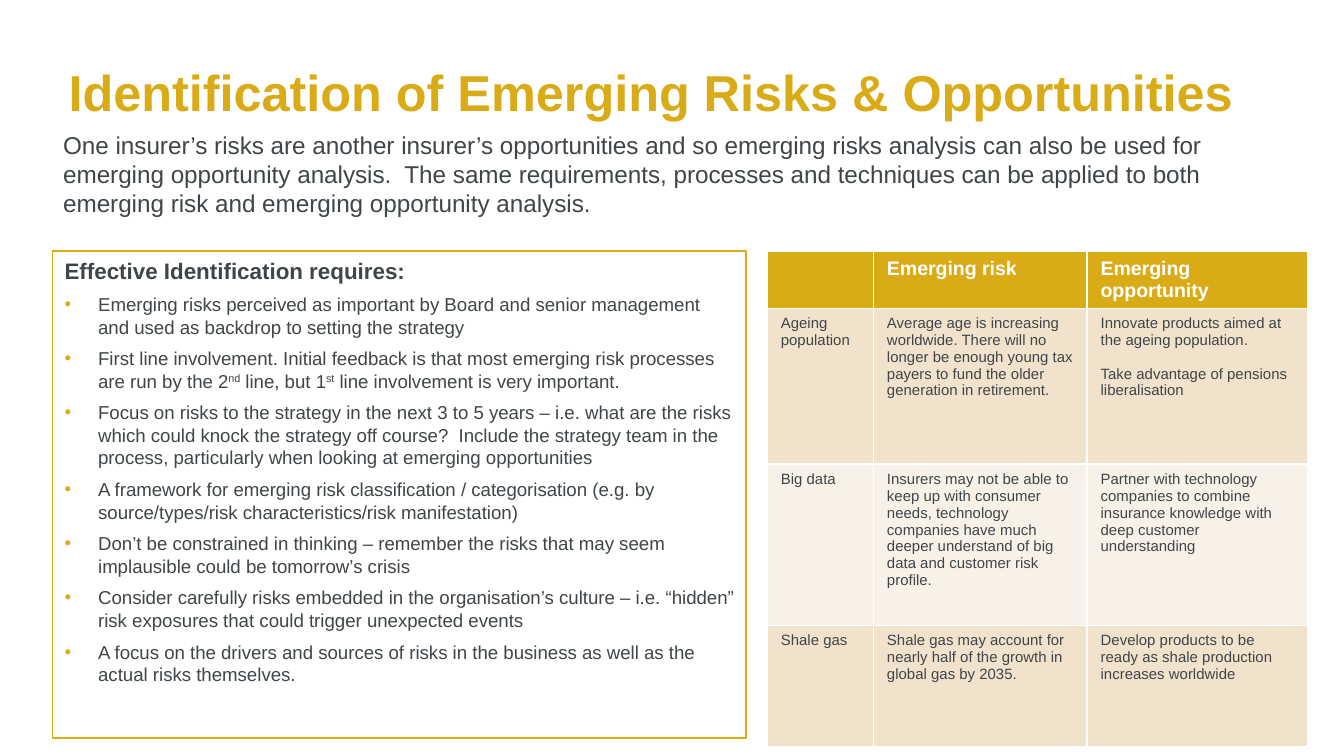
"""Build the slide on identifying emerging risks and opportunities."""
import pptx
import pptx.dml.color
import pptx.enum.text
import pptx.oxml.ns
import pptx.util
from lxml import etree

Inches = pptx.util.Inches
Pt = pptx.util.Pt
RGBColor = pptx.dml.color.RGBColor

GOLD = RGBColor(0xD9, 0xAB, 0x16)
SLATE = RGBColor(0x3F, 0x45, 0x48)
WHITE = RGBColor(0xFF, 0xFF, 0xFF)
SAND = RGBColor(0xF1, 0xE2, 0xCC)
CREAM = RGBColor(0xF8, 0xF1, 0xE8)

TITLE = "Identification of Emerging Risks & Opportunities"
INTRO = (
    "One insurer’s risks are another insurer’s opportunities and so emerging risks analysis "
    "can also be used for emerging opportunity analysis.  The same requirements, processes and "
    "techniques can be applied to both emerging risk and emerging opportunity analysis."
)
HEADING = "Effective Identification requires:"
SUPERSCRIPTS = ("nd", "st")
REQUIREMENTS = [
    ["Emerging risks perceived as important by Board and senior management and used as "
     "backdrop to setting the strategy"],
    ["First line involvement. Initial feedback is that most emerging risk processes are run "
     "by the 2", "nd", " line, but 1", "st", " line involvement is very important."],
    ["Focus on risks to the strategy in the next 3 to 5 years – i.e. what are the risks which "
     "could knock the strategy off course?  Include the strategy team in the process, "
     "particularly when looking at emerging opportunities"],
    ["A framework for emerging risk classification / categorisation (e.g. by "
     "source/types/risk characteristics/risk manifestation)"],
    ["Don’t be constrained in thinking – remember the risks that may seem implausible could "
     "be tomorrow’s crisis"],
    ["Consider carefully risks embedded in the organisation’s culture – i.e. “hidden” risk "
     "exposures that could trigger unexpected events"],
    ["A focus on the drivers and sources of risks in the business as well as the actual risks "
     "themselves."],
]
TABLE_ROWS = [
    ("", "Emerging risk", "Emerging opportunity"),
    ("Ageing population",
     "Average age is increasing worldwide. There will no longer be enough young tax payers to "
     "fund the older generation in retirement.",
     "Innovate products aimed at the ageing population.\n"
     "Take advantage of pensions liberalisation"),
    ("Big data",
     "Insurers may not be able to keep up with consumer needs, technology companies have much "
     "deeper understand of big data and customer risk profile.",
     "Partner with technology companies to combine insurance knowledge with deep customer "
     "understanding"),
    ("Shale gas",
     "Shale gas may account for nearly half of the growth in global gas by 2035.",
     "Develop products to be ready as shale production increases worldwide"),
]
COLUMN_WIDTHS = (0.79, 1.59, 1.64)
ROW_HEIGHTS = (0.35, 1.16, 1.2, 0.9)
ROW_FILLS = (GOLD, SAND, CREAM, SAND)


def place(box, left, top, width, height):
    box.left, box.top = Inches(left), Inches(top)
    box.width, box.height = Inches(width), Inches(height)
    frame = box.text_frame
    frame.word_wrap = True
    frame.auto_size = pptx.enum.text.MSO_AUTO_SIZE.NONE
    frame.margin_left = frame.margin_right = Inches(0.09)
    frame.margin_top = frame.margin_bottom = Inches(0.04)
    return frame


def style(para, size, color, bold=False, before=0):
    para.font.name = "Arial"
    para.font.size = Pt(size)
    para.font.bold = bold
    para.font.color.rgb = color
    para.alignment = pptx.enum.text.PP_ALIGN.LEFT
    para.space_before = Pt(before)


def set_bullet(para, color=None):
    properties = para._p.get_or_add_pPr()
    indent = Inches(0.25) if color else 0
    properties.set("marL", str(indent))
    properties.set("indent", str(-indent))
    tag = pptx.oxml.ns.qn
    if color:
        bullet_color = etree.Element(tag("a:buClr"))
        etree.SubElement(bullet_color, tag("a:srgbClr"), val=str(color))
        marks = [bullet_color, etree.Element(tag("a:buChar"), char="•")]
    else:
        marks = [etree.Element(tag("a:buNone"))]
    defaults = properties.find(tag("a:defRPr"))
    for mark in marks:
        defaults.addprevious(mark)


def add_requirements(page):
    box = page.placeholders[1]
    frame = place(box, 0.39, 1.87, 5.16, 3.62)
    box.line.color.rgb = GOLD
    box.line.width = Pt(1)
    frame.vertical_anchor = pptx.enum.text.MSO_ANCHOR.TOP
    para = frame.paragraphs[0]
    para.text = HEADING
    style(para, 12, SLATE, bold=True)
    set_bullet(para)
    for parts in REQUIREMENTS:
        para = frame.add_paragraph()
        style(para, 10, SLATE, before=5)
        set_bullet(para, GOLD)
        for part in parts:
            span = para.add_run()
            span.text = part
            if part in SUPERSCRIPTS:
                span._r.get_or_add_rPr().set("baseline", "30000")


def add_examples(page):
    table = page.shapes.add_table(
        len(TABLE_ROWS), len(COLUMN_WIDTHS), Inches(5.71), Inches(1.87),
        Inches(sum(COLUMN_WIDTHS)), Inches(sum(ROW_HEIGHTS))).table
    for column, width in zip(table.columns, COLUMN_WIDTHS):
        column.width = Inches(width)
    for row_index, texts in enumerate(TABLE_ROWS):
        table.rows[row_index].height = Inches(ROW_HEIGHTS[row_index])
        header = row_index == 0
        for column_index, text in enumerate(texts):
            cell = table.cell(row_index, column_index)
            cell.fill.solid()
            cell.fill.fore_color.rgb = ROW_FILLS[row_index]
            cell.text = text
            for index, para in enumerate(cell.text_frame.paragraphs):
                style(para, 10.5 if header else 8, WHITE if header else SLATE,
                      bold=header, before=9 if index else 0)


def main():
    deck = pptx.Presentation()
    deck.slide_width = Inches(10)
    deck.slide_height = deck.slide_width * 9 // 16
    page = deck.slides.add_slide(deck.slide_layouts[1])

    frame = place(page.shapes.title, 0.42, 0.21, 9.07, 0.94)
    frame.vertical_anchor = pptx.enum.text.MSO_ANCHOR.MIDDLE
    frame.text = TITLE
    style(frame.paragraphs[0], 27, GOLD, bold=True)

    add_requirements(page)

    intro = page.shapes.add_textbox(0, 0, 0, 0)
    frame = place(intro, 0.38, 0.93, 9.33, 0.79)
    frame.text = INTRO
    style(frame.paragraphs[0], 13, SLATE)

    add_examples(page)
    deck.save("out.pptx")


if __name__ == "__main__":
    main()
